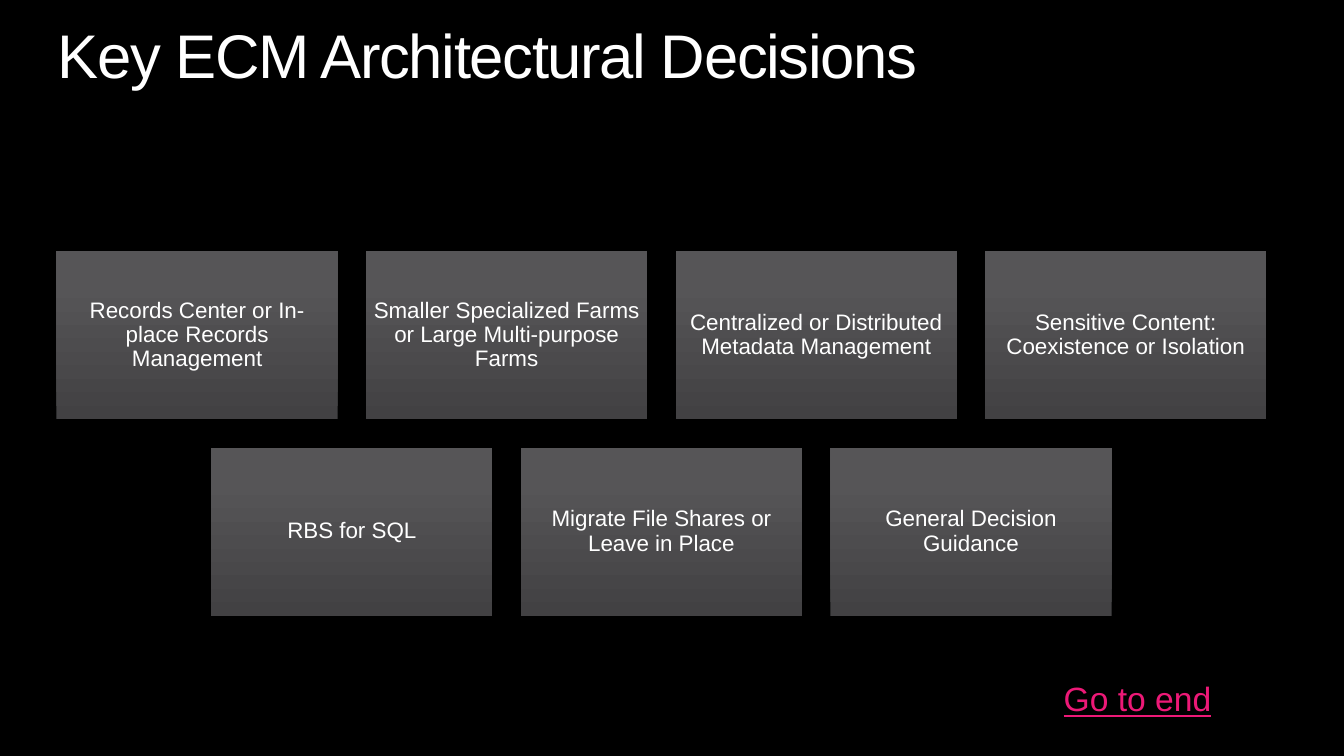
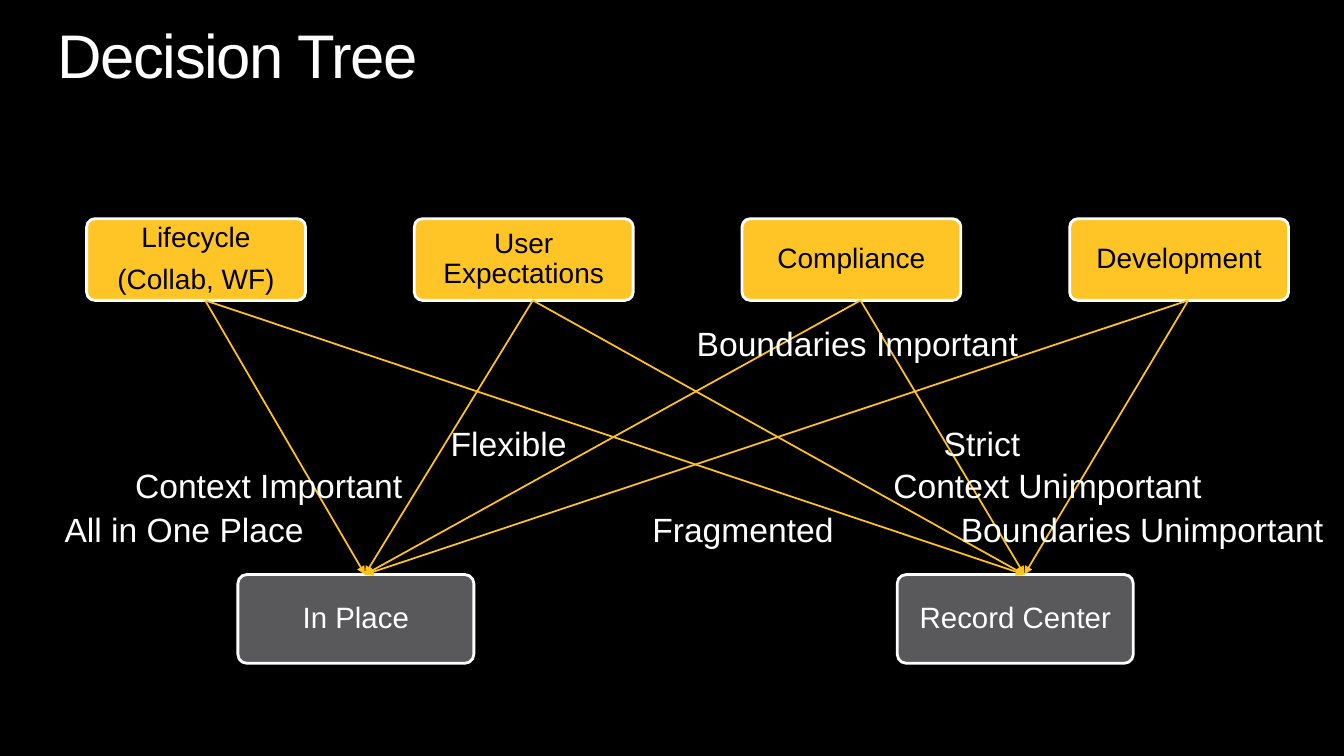
from copy import deepcopy
from pptx import Presentation
from pptx.dml.color import RGBColor
from pptx.enum import shapes, text
from pptx.oxml.ns import qn
from pptx.oxml.xmlchemy import OxmlElement
from pptx.util import Inches, Pt

COLORS = {
    "back": "000000", "white": "FFFFFF", "black": "000000", "pink": "ED1977",
    "gold": "FFC425", "line": "FFC21F", "gray": "59585A",
}
CARD_STOPS = [(0, "424143"), (0.8, "565557"), (1, "575558")]
FONT = "Arial"

CARDS = [
    ["Records Center or In-place Records Management",
     "Smaller Specialized Farms or Large Multi-purpose Farms",
     "Centralized or Distributed Metadata Management",
     "Sensitive Content: Coexistence or Isolation"],
    ["RBS for SQL", "Migrate File Shares or Leave in Place",
     "General Decision Guidance"],
]
FACTORS = ["Lifecycle\n(Collab, WF)", "User Expectations", "Compliance", "Development"]
RESULTS = ["In Place", "Record Center"]
# Label text with left, top and width within the tree
LABELS = [
    ("All in One Place", -0.22, 2.88, 2.39), ("Fragmented", 5.61, 2.88, 1.81),
    ("Context Important", 0.48, 2.44, 2.67), ("Context Unimportant", 8, 2.44, 3.08),
    ("Flexible", 3.61, 2.03, 1.16), ("Strict", 8.5, 2.03, 0.77),
    ("Boundaries Important", 6.05, 1.03, 3.22),
    ("Boundaries Unimportant", 8.67, 2.88, 3.63),
]


def rgb(name):
    return RGBColor.from_string(COLORS[name])


def inset(frame, size):
    frame.margin_left = frame.margin_right = Inches(size)
    frame.margin_top = frame.margin_bottom = Inches(size)


def style(frame, size, color, align, spacing=None):
    """Format every paragraph and run of a text frame."""
    for i, para in enumerate(frame.paragraphs):
        para.alignment = align
        if spacing:
            para.line_spacing = spacing
        if i:
            para.space_before = Pt(8)
        for run in para.runs:
            run.font.size, run.font.name = Pt(size), FONT
            run.font.color.rgb = rgb(color)


def new_slide(deck, title):
    """Add a slide with the shared title style."""
    slide = deck.slides.add_slide(deck.slide_layouts[5])
    head = slide.shapes.title
    head.left, head.top = Inches(0.57), Inches(0.25)
    head.width, head.height = Inches(12.19), Inches(0.67)
    frame = head.text_frame
    frame.text = title
    frame.auto_size = text.MSO_AUTO_SIZE.NONE
    frame.vertical_anchor = text.MSO_ANCHOR.TOP
    inset(frame, 0)
    style(frame, 44, "white", text.PP_ALIGN.LEFT, 0.9)
    for run in frame.paragraphs[0].runs:
        run._r.get_or_add_rPr().set("spc", "-100")
    return slide


def add_box(slide, kind, words, x, y, w, h, size, color, pad):
    """Add a preset shape with centred text."""
    box = slide.shapes.add_shape(kind, Inches(x), Inches(y), Inches(w), Inches(h))
    box.shadow.inherit = False
    frame = box.text_frame
    frame.text = words
    frame.word_wrap = True
    frame.vertical_anchor = text.MSO_ANCHOR.MIDDLE
    inset(frame, pad)
    style(frame, size, color, text.PP_ALIGN.CENTER, 0.9)
    return box


def add_card(slide, words, x, y, w, h):
    card = add_box(slide, shapes.MSO_SHAPE.RECTANGLE, words, x, y, w, h, 16, "white", 0.07)
    card.line.fill.background()
    card.fill.gradient()
    card.fill.gradient_angle = 90
    stops = card._element.spPr.find(".//" + qn("a:gsLst"))
    stops.append(deepcopy(stops[0]))
    for stop, (place, shade) in zip(card.fill.gradient_stops, CARD_STOPS):
        stop.position = place
        stop.color.rgb = RGBColor.from_string(shade)


def add_node(slide, words, x, y, w, h, size, fill, color):
    node = add_box(slide, shapes.MSO_SHAPE.ROUNDED_RECTANGLE, words,
                   x, y, w, h, size, color, 0.04)
    node.adjustments[0] = 0.1
    node.fill.solid()
    node.fill.fore_color.rgb = rgb(fill)
    node.line.color.rgb = rgb("white")
    node.line.width = Pt(2)


def add_arrow(slide, start, end):
    arrow = slide.shapes.add_connector(
        shapes.MSO_CONNECTOR.STRAIGHT, *(Inches(v) for v in start + end))
    arrow.line.color.rgb = rgb("line")
    arrow.line.width = Pt(1.25)
    tip = OxmlElement("a:tailEnd")
    tip.set("type", "triangle")
    arrow.line._get_or_add_ln().append(tip)
    arrow._element.spPr.append(OxmlElement("a:effectLst"))


def add_label(slide, words, x, y, w, color="white", wrap=False):
    label = slide.shapes.add_textbox(Inches(x), Inches(y), Inches(w), Inches(0.4))
    frame = label.text_frame
    frame.text = words
    frame.word_wrap = wrap
    frame.auto_size = text.MSO_AUTO_SIZE.SHAPE_TO_FIT_TEXT
    inset(frame, 0)
    style(frame, 24, color, text.PP_ALIGN.LEFT)
    return label


def draw_cards(slide, x, y, width):
    """Lay out rows of cards, each row centred in the width."""
    w, h, gap = 2.79, 1.67, 0.28
    for r, row in enumerate(CARDS):
        span = len(row) * (w + gap) - gap
        left = x + (width - span) / 2
        for c, words in enumerate(row):
            add_card(slide, words, left + c * (w + gap), y + r * (h + gap), w, h)


def draw_tree(slide, x, y):
    """Link every factor on top to both results below."""
    w, h, shift = 2.17, 0.81, 0.09
    tops, ends = [], []
    for i, words in enumerate(RESULTS):
        left, top = x + 1.5 + 6.54 * i, y + 3.53
        add_node(slide, words, left, top, 2.34, 0.88, 21, "gray", "white")
        ends.append((left + 1.17 + shift, top))
    for i, words in enumerate(FACTORS):
        left = x + 3.25 * i
        add_node(slide, words, left, y, w, h, 20, "gold", "black")
        tops.append((left + w / 2 + shift, y + h))
    for start in tops:
        for end in ends:
            add_arrow(slide, start, end)
    for words, left, top, wide in LABELS:
        add_label(slide, words, x + left, y + top, wide)


def main():
    deck = Presentation()
    deck.slide_width, deck.slide_height = Inches(13.33), Inches(7.5)
    back = deck.slide_master.background.fill
    back.solid()
    back.fore_color.rgb = rgb("back")

    # Decisions
    slide = new_slide(deck, "Key ECM Architectural Decisions")
    draw_cards(slide, 0.56, 2.49, 12)
    jump = add_label(slide, "Go to end", 10.55, 6.73, 1.67, "pink", True)
    jump.text_frame.paragraphs[0].runs[0].font.underline = True

    # Tree
    slide = new_slide(deck, "Decision Tree")
    draw_tree(slide, 0.86, 2.17)
    deck.save("out.pptx")


if __name__ == "__main__":
    main()
